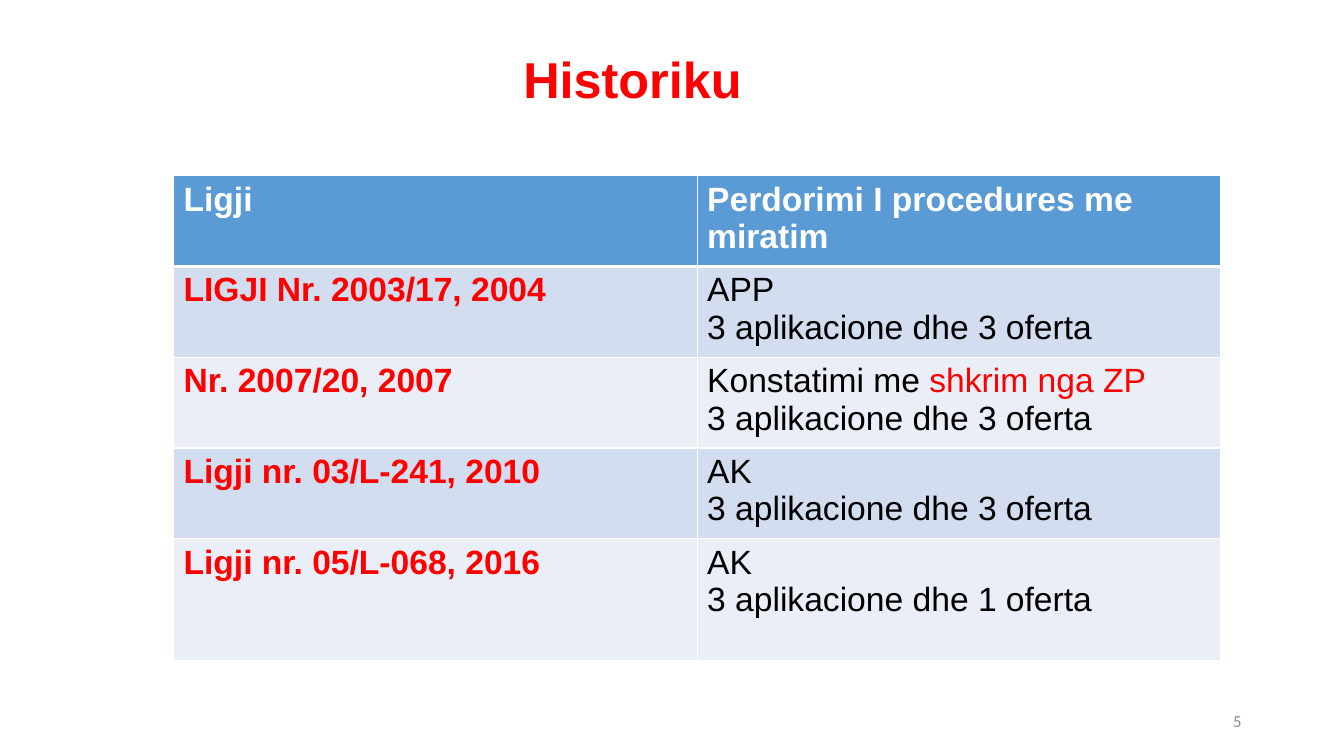
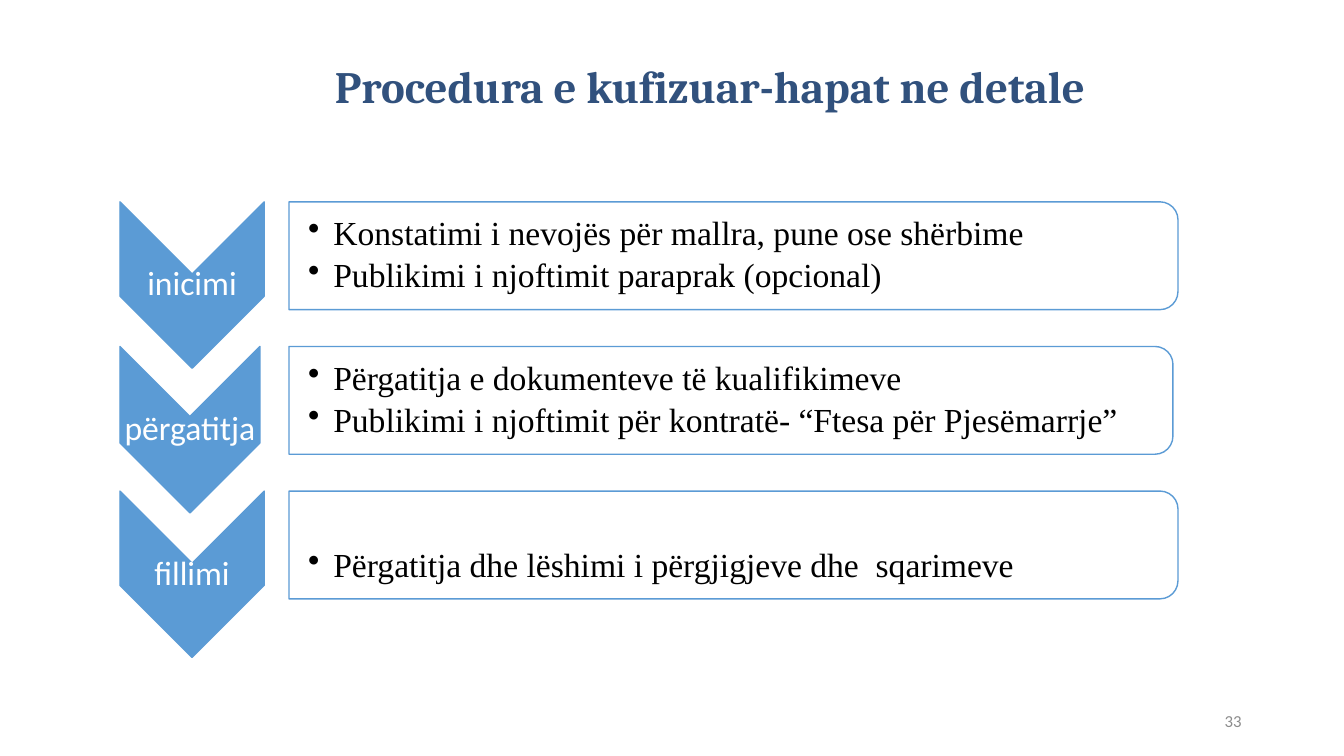
from dataclasses import dataclass

from lxml import etree
from pptx import Presentation
from pptx.dml.color import RGBColor
from pptx.enum.shapes import MSO_SHAPE
from pptx.enum.text import MSO_ANCHOR, PP_ALIGN
from pptx.oxml.ns import qn
from pptx.util import Pt

CHEVRON = MSO_SHAPE.CHEVRON
PANEL = MSO_SHAPE.ROUND_2_SAME_RECTANGLE
TOP, MIDDLE = MSO_ANCHOR.TOP, MSO_ANCHOR.MIDDLE
LEFT, CENTER, RIGHT = PP_ALIGN.LEFT, PP_ALIGN.CENTER, PP_ALIGN.RIGHT

COLORS = {
    "white": "FFFFFF",
    "black": "000000",
    "red": "FF0000",
    "navy": "31517D",
    "blue": "5B9BD5",
    "band_dark": "D2DEEF",
    "band_light": "EAEFF7",
    "gray": "8C8C8C",
}
DEFAULT_INSETS = (7.2, 3.6, 7.2, 3.6)
TIGHT_INSETS = (1.5, 1.5, 1.5, 1.5)

STEP_TOP, STEP_PITCH = 144.2, 103.3
CHEVRON_LEFT, CHEVRON_HEIGHT = 85.7, 118.8
PANEL_LEFT, PANEL_HEIGHT = 206.4, 77


@dataclass(frozen=True)
class Style:
    font: str
    size: float
    color: str
    bold: bool = False


@dataclass(frozen=True)
class Area:
    left: float
    top: float
    width: float
    height: float

    def points(self):
        return Pt(self.left), Pt(self.top), Pt(self.width), Pt(self.height)

    def quarter_turned(self):
        shift = (self.width - self.height) / 2
        return Area(self.left + shift, self.top - shift, self.height, self.width)


@dataclass(frozen=True)
class Span:
    text: str
    style: Style


@dataclass(frozen=True)
class Step:
    label: str
    bullets: tuple[str, ...]
    chevron_width: float = 103
    panel_width: float = 635
    extra_top: float = 0


RED_TITLE = Style("Arial", 36, "red", True)
NAVY_TITLE = Style("Cambria", 32, "navy", True)
NUMBER = Style("Calibri", 12, "gray")
HEADER = Style("Arial", 24, "white", True)
LAW = Style("Arial", 24, "red", True)
PLAIN = Style("Arial", 24, "black")
ACCENT = Style("Arial", 24, "red")
LABEL = Style("Calibri", 24, "white")
BULLET = Style("Times New Roman", 24, "black")

THREE_OFFERS = (Span("3 aplikacione dhe 3 oferta", PLAIN),)
ONE_OFFER = (Span("3 aplikacione dhe 1 oferta", PLAIN),)
AK = (Span("AK", PLAIN),)

LAW_ROWS = (
    ("LIGJI Nr. 2003/17, 2004", ((Span("APP", PLAIN),), THREE_OFFERS)),
    ("Nr. 2007/20, 2007",
     ((Span("Konstatimi me ", PLAIN), Span("shkrim nga ZP", ACCENT)), THREE_OFFERS)),
    ("Ligji nr. 03/L-241, 2010", (AK, THREE_OFFERS)),
    ("Ligji nr. 05/L-068, 2016", (AK, ONE_OFFER)),
)

STEPS = (
    Step("inicimi", ("Konstatimi i nevojës për mallra, pune ose shërbime",
                     "Publikimi i njoftimit paraprak (opcional)")),
    Step("përgatitja", ("Përgatitja e dokumenteve të kualifikimeve",
                        "Publikimi i njoftimit për kontratë- “Ftesa për Pjesëmarrje”"),
         chevron_width=100, panel_width=631.4),
    Step("fillimi", ("Përgatitja dhe lëshimi i përgjigjeve dhe  sqarimeve",),
         extra_top=31.5),
)


def rgb(name: str) -> RGBColor:
    return RGBColor.from_string(COLORS[name])


def add_span(para, span: Span) -> None:
    run = para.add_run()
    run.text = span.text
    run.font.name = span.style.font
    run.font.size = Pt(span.style.size)
    run.font.bold = span.style.bold
    run.font.color.rgb = rgb(span.style.color)


def fill_text(frame, lines, align=LEFT) -> list:
    paras = []
    for index, spans in enumerate(lines):
        para = frame.add_paragraph() if index else frame.paragraphs[0]
        para.alignment = align
        for span in spans:
            add_span(para, span)
        paras.append(para)
    return paras


def add_text(page, area: Area, lines, align=LEFT, anchor=MIDDLE,
             insets=DEFAULT_INSETS, spacing: float = 0.9) -> list:
    frame = page.shapes.add_textbox(*area.points()).text_frame
    frame.word_wrap = True
    frame.vertical_anchor = anchor
    (frame.margin_left, frame.margin_top,
     frame.margin_right, frame.margin_bottom) = map(Pt, insets)
    paras = fill_text(frame, lines, align)
    for para in paras:
        para.line_spacing = spacing
    return paras


def add_title(page, area: Area, text: str, style: Style, anchor) -> None:
    add_text(page, area, ((Span(text, style),),), CENTER, anchor)


def add_page_number(page, number: int) -> None:
    add_text(page, Area(678, 500.5, 216, 28.75), ((Span(str(number), NUMBER),),),
             RIGHT, spacing=1)


def add_turned_shape(page, kind, area: Area, fill: str):
    shape = page.shapes.add_shape(kind, *area.quarter_turned().points())
    shape.rotation = 90
    shape.shadow.inherit = False
    shape.fill.solid()
    shape.fill.fore_color.rgb = rgb(fill)
    shape.line.color.rgb = rgb("blue")
    shape.line.width = Pt(1)
    return shape


def add_bullet(para) -> None:
    props = para._p.get_or_add_pPr()
    props.set("marL", str(Pt(18)))
    props.set("indent", str(-Pt(18)))
    etree.SubElement(props, qn("a:buChar"), char="•")


def add_border(cell, side: str, width: float) -> None:
    props = cell._tc.get_or_add_tcPr()
    line = etree.SubElement(props, qn(f"a:{side}"), w=str(Pt(width)))
    fill = etree.SubElement(line, qn("a:solidFill"))
    etree.SubElement(fill, qn("a:srgbClr"), val=COLORS["white"])


def fill_cell(cell, lines, fill: str, top: float, bottom: float) -> None:
    for side, width in (("lnL", 1), ("lnR", 1), ("lnT", top), ("lnB", bottom)):
        add_border(cell, side, width)
    cell.fill.solid()
    cell.fill.fore_color.rgb = rgb(fill)
    fill_text(cell.text_frame, lines)


def add_law_table(page) -> None:
    heights = (60.7, 60.7, 60.7, 60.7, 87)
    area = Area(124, 125.5, 748, sum(heights))
    table = page.shapes.add_table(len(heights), 2, *area.points()).table
    for column in table.columns:
        column.width = Pt(area.width / 2)
    for row, height in zip(table.rows, heights):
        row.height = Pt(height)
    header = ("Ligji", "Perdorimi I procedures me miratim")
    for column, text in enumerate(header):
        fill_cell(table.cell(0, column), ((Span(text, HEADER),),), "blue", 1, 3)
    for row, (law, usage) in enumerate(LAW_ROWS, 1):
        band = "band_dark" if row % 2 else "band_light"
        top = 3 if row == 1 else 1
        for column, lines in enumerate((((Span(law, LAW),),), usage)):
            fill_cell(table.cell(row, column), lines, band, top, 1)


def add_step(page, step: Step, top: float) -> None:
    arrow = Area(CHEVRON_LEFT, top, step.chevron_width, CHEVRON_HEIGHT)
    add_turned_shape(page, CHEVRON, arrow, "blue")
    label = Area(arrow.left, top + arrow.height / 2 - 8, arrow.width, 16)
    add_text(page, label, ((Span(step.label, LABEL),),), CENTER, insets=TIGHT_INSETS)

    panel = Area(PANEL_LEFT, top, step.panel_width, PANEL_HEIGHT)
    shape = add_turned_shape(page, PANEL, panel, "white")
    color = shape._element.spPr.find(qn("a:solidFill")).find(qn("a:srgbClr"))
    etree.SubElement(color, qn("a:alpha"), val="90000")
    lines = [(Span(text, BULLET),) for text in step.bullets]
    insets = (13.7, 1.5 + step.extra_top, 1.5, 1.5)
    for para in add_text(page, panel, lines, insets=insets):
        para.space_after = Pt(4.3)
        add_bullet(para)


def build_history(page) -> None:
    add_title(page, Area(21.6, 36, 860.4, 62), "Historiku", RED_TITLE, TOP)
    add_law_table(page)
    add_page_number(page, 5)


def build_steps(page) -> None:
    add_title(page, Area(201.6, 27.4, 611.3, 72),
              "Procedura e kufizuar-hapat ne detale", NAVY_TITLE, MIDDLE)
    for index, step in enumerate(STEPS):
        add_step(page, step, STEP_TOP + index * STEP_PITCH)
    add_page_number(page, 33)


def main() -> None:
    deck = Presentation()
    deck.slide_width, deck.slide_height = Pt(960), Pt(540)
    for build in (build_history, build_steps):
        build(deck.slides.add_slide(deck.slide_layouts[6]))
    deck.save("out.pptx")


if __name__ == "__main__":
    main()
